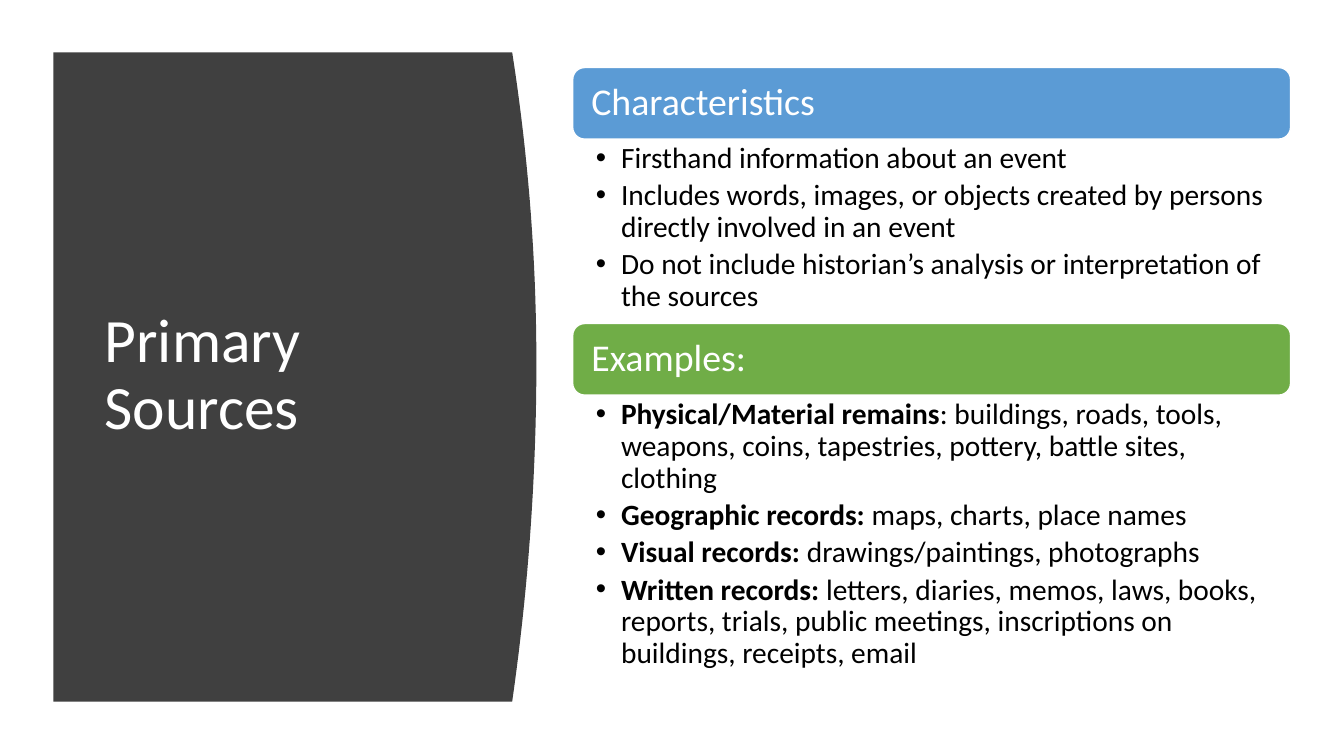
from lxml import etree
from pptx import Presentation
from pptx.dml.color import RGBColor
from pptx.enum import shapes, text
from pptx.oxml import ns
from pptx.util import Inches, Pt

FONT = "Calibri"
WHITE, BLACK, CHARCOAL = "FFFFFF", "000000", "404040"
BLUE, GREEN = "5B9BD5", "70AD47"
LIST_LEFT, LIST_WIDTH, HEADER_HEIGHT = 5.68, 7.12, 0.71

# Each bullet is a bold lead and the plain text after it
CHARACTERISTICS = [
    ("", "Firsthand information about an event"),
    ("", "Includes words, images, or objects created by persons "
         "directly involved in an event"),
    ("", "Do not include historian’s analysis or interpretation of the sources"),
]
EXAMPLES = [
    ("Physical/Material remains", ": buildings, roads, tools, weapons, coins, "
                                  "tapestries, pottery, battle sites, clothing"),
    ("Geographic records: ", "maps, charts, place names"),
    ("Visual records: ", "drawings/paintings, photographs"),
    ("Written records: ", "letters, diaries, memos, laws, books, reports, trials, "
                          "public meetings, inscriptions on buildings, receipts, email"),
]


def color(value):
    return RGBColor.from_string(value)


def fill_shape(shape, fill):
    shape.shadow.inherit = False
    shape.fill.solid()
    shape.fill.fore_color.rgb = color(fill)


def format_run(run, size, font_color, bold=False):
    run.font.name = FONT
    run.font.size = Pt(size)
    run.font.bold = bold
    run.font.color.rgb = color(font_color)


def set_frame(frame, anchor, left, top, right, bottom):
    frame.word_wrap = True
    frame.vertical_anchor = anchor
    frame.margin_left, frame.margin_top = Inches(left), Inches(top)
    frame.margin_right, frame.margin_bottom = Inches(right), Inches(bottom)


def set_line(frame, wording, size):
    frame.text = wording
    paragraph = frame.paragraphs[0]
    paragraph.alignment = text.PP_ALIGN.LEFT
    paragraph.line_spacing = 0.9
    format_run(paragraph.runs[0], size, WHITE)


def add_curved_panel(slide):
    left, top, bottom, edge = 0.53, 0.52, 6.96, 5.08
    bulge, peak, steps = 0.24, 3.6, 40
    points = []
    for step in range(steps + 1):
        y = top + (bottom - top) * step / steps
        reach = peak - top if y < peak else bottom - peak
        x = edge + bulge * (1 - ((y - peak) / reach) ** 2)
        points.append((Inches(x), Inches(y)))
    points.append((Inches(left), Inches(bottom)))
    builder = slide.shapes.build_freeform(Inches(left), Inches(top))
    builder.add_line_segments(points, close=True)
    panel = builder.convert_to_shape()
    fill_shape(panel, CHARCOAL)
    panel.line.fill.background()


def add_title(slide, wording):
    box = slide.shapes.add_textbox(Inches(0.94), Inches(1.11), Inches(3.74), Inches(5.24))
    set_frame(box.text_frame, text.MSO_ANCHOR.MIDDLE, 0.1, 0.05, 0.1, 0.05)
    set_line(box.text_frame, wording, 44)


def add_header(slide, top, wording, fill):
    header = slide.shapes.add_shape(
        shapes.MSO_SHAPE.ROUNDED_RECTANGLE,
        Inches(LIST_LEFT), Inches(top), Inches(LIST_WIDTH), Inches(HEADER_HEIGHT))
    fill_shape(header, fill)
    header.line.color.rgb = color(WHITE)
    header.line.width = Pt(1)
    set_frame(header.text_frame, text.MSO_ANCHOR.MIDDLE, 0.15, 0.11, 0.15, 0.11)
    set_line(header.text_frame, wording, 27)


def add_bullet(paragraph):
    properties = paragraph._p.get_or_add_pPr()
    properties.set("marL", str(Inches(0.25)))
    properties.set("indent", str(Inches(-0.25)))
    etree.SubElement(properties, ns.qn("a:buFont")).set("typeface", "Arial")
    etree.SubElement(properties, ns.qn("a:buChar")).set("char", "•")


def add_bullets(slide, top, height, items):
    box = slide.shapes.add_textbox(
        Inches(LIST_LEFT), Inches(top), Inches(LIST_WIDTH), Inches(height))
    frame = box.text_frame
    set_frame(frame, text.MSO_ANCHOR.TOP, 0.23, 0.04, 0.21, 0.04)
    for index, (lead, detail) in enumerate(items):
        paragraph = frame.add_paragraph() if index else frame.paragraphs[0]
        paragraph.level = 1
        paragraph.line_spacing = 0.9
        paragraph.space_after = Pt(4)
        add_bullet(paragraph)
        for wording, bold in ((lead, True), (detail, False)):
            if wording:
                run = paragraph.add_run()
                run.text = wording
                format_run(run, 21, BLACK, bold)


def main():
    presentation = Presentation()
    presentation.slide_width, presentation.slide_height = Inches(13.33), Inches(7.5)
    slide = presentation.slides.add_slide(presentation.slide_layouts[6])

    # Title panel
    add_curved_panel(slide)
    add_title(slide, "Primary Sources")

    # Stacked sections, each a header above its bullets
    top = 0.67
    for heading, fill, height, items in (
        ("Characteristics", BLUE, 1.83, CHARACTERISTICS),
        ("Examples:", GREEN, 2.87, EXAMPLES),
    ):
        add_header(slide, top, heading, fill)
        add_bullets(slide, top + HEADER_HEIGHT, height, items)
        top += HEADER_HEIGHT + height

    presentation.save("out.pptx")


if __name__ == "__main__":
    main()
